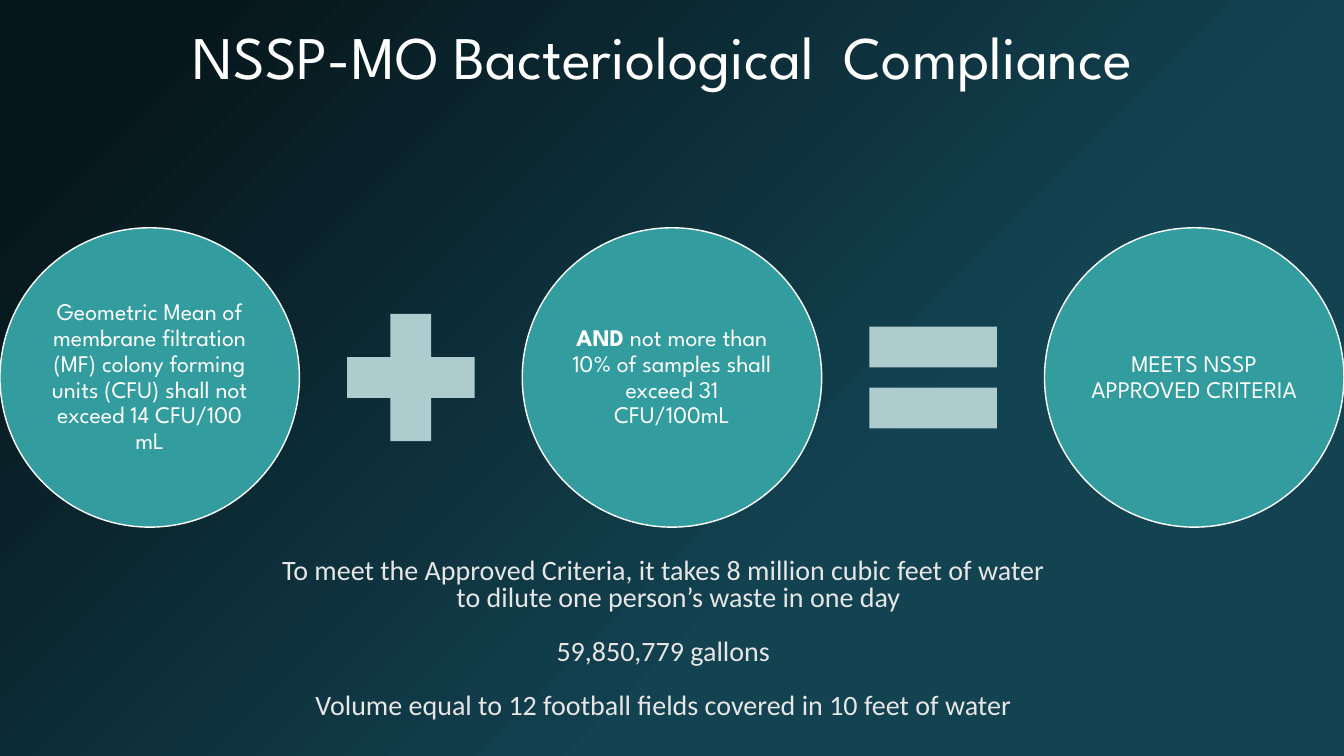
"""Build the NSSP-MO bacteriological compliance slide."""
from dataclasses import dataclass

import pptx
import pptx.dml.color
import pptx.enum.shapes
import pptx.enum.text
import pptx.util

Inches = pptx.util.Inches
Pt = pptx.util.Pt
Color = pptx.dml.color.RGBColor.from_string
Shape = pptx.enum.shapes.MSO_SHAPE
Anchor = pptx.enum.text.MSO_ANCHOR
Align = pptx.enum.text.PP_ALIGN


@dataclass(frozen=True)
class Theme:
    """Colours, fonts and type sizes of the slide."""

    dark: str = "06171C"
    deep: str = "134251"
    teal: str = "339C9F"
    pale: str = "AECBCD"
    white: str = "FFFFFF"
    grey: str = "E7E6E6"
    head: str = "League Spartan"
    body: str = "Calibri"
    title: float = 43.2
    label: float = 17
    note: float = 20


theme = Theme()


def style(para, face, size, color, space):
    """Centre a paragraph and format its runs."""
    para.alignment = Align.CENTER
    para.line_spacing = space
    for run in para.runs:
        run.font.name = face
        run.font.size = Pt(size)
        run.font.color.rgb = Color(color)


def paint(shape, color):
    """Give a shape a flat fill without shadow or line."""
    shape.shadow.inherit = False
    shape.fill.solid()
    shape.fill.fore_color.rgb = Color(color)
    shape.line.fill.background()


deck = pptx.Presentation()
deck.slide_width = Inches(13.33)
deck.slide_height = Inches(7.5)
slide = deck.slides.add_slide(deck.slide_layouts[6])

back = slide.background.fill
back.gradient()
back.gradient_angle = 315
stops = ((0.1, theme.dark), (0.65, theme.deep))
for stop, (place, color) in zip(back.gradient_stops, stops):
    stop.position = place
    stop.color.rgb = Color(color)

size, step, top = 2.97, 5.18, 2.26
sign = 1.72
terms = (
    ("", "Geometric Mean of membrane filtration (MF) colony forming units "
     "(CFU) shall not exceed 14 CFU/100 mL"),
    ("AND", " not more than 10% of samples shall exceed 31 CFU/100mL"),
    ("", "MEETS NSSP APPROVED CRITERIA"),
)
for i, (bold, text) in enumerate(terms):
    disc = slide.shapes.add_shape(
        Shape.OVAL, Inches(i * step), Inches(top), Inches(size), Inches(size))
    paint(disc, theme.teal)
    disc.line.color.rgb = Color(theme.white)
    disc.line.width = Pt(1)
    frame = disc.text_frame
    frame.word_wrap = True
    frame.vertical_anchor = Anchor.MIDDLE
    frame.margin_left = frame.margin_right = Inches(0.02)
    frame.margin_top = frame.margin_bottom = Inches(0.02)
    para = frame.paragraphs[0]
    if bold:
        run = para.add_run()
        run.text = bold
        run.font.bold = True
    para.add_run().text = text
    style(para, theme.head, theme.label, theme.white, 0.9)

gap = (step - size - sign) / 2
for i, kind in enumerate((Shape.MATH_PLUS, Shape.MATH_EQUAL)):
    mark = slide.shapes.add_shape(
        kind, Inches(i * step + size + gap), Inches(top + (size - sign) / 2),
        Inches(sign), Inches(sign))
    paint(mark, theme.pale)

title = slide.shapes.add_textbox(
    Inches(0.66), Inches(0.17), Inches(11.83), Inches(0.9))
frame = title.text_frame
frame.word_wrap = True
frame.vertical_anchor = Anchor.MIDDLE
frame.text = "NSSP-MO Bacteriological  Compliance"
style(frame.paragraphs[0], theme.head, theme.title, theme.white, 0.8)

notes = (
    "To meet the Approved Criteria, it takes 8 million cubic feet of water "
    "to dilute one person’s waste in one day",
    "59,850,779 gallons",
    "Volume equal to 12 football fields covered in 10 feet of water",
)
box = slide.shapes.add_textbox(
    Inches(2.58), Inches(5.5), Inches(8), Inches(1.83))
frame = box.text_frame
frame.word_wrap = True
frame.text = "\n".join(notes)
for i, para in enumerate(frame.paragraphs):
    props = para._p.get_or_add_pPr()
    props.set("marL", str(Inches(0.3)))
    props.set("indent", str(Inches(-0.3)))
    style(para, theme.body, theme.note, theme.grey, 0.8)
    if i:
        para.space_before = Pt(19.3)

deck.save("out.pptx")
